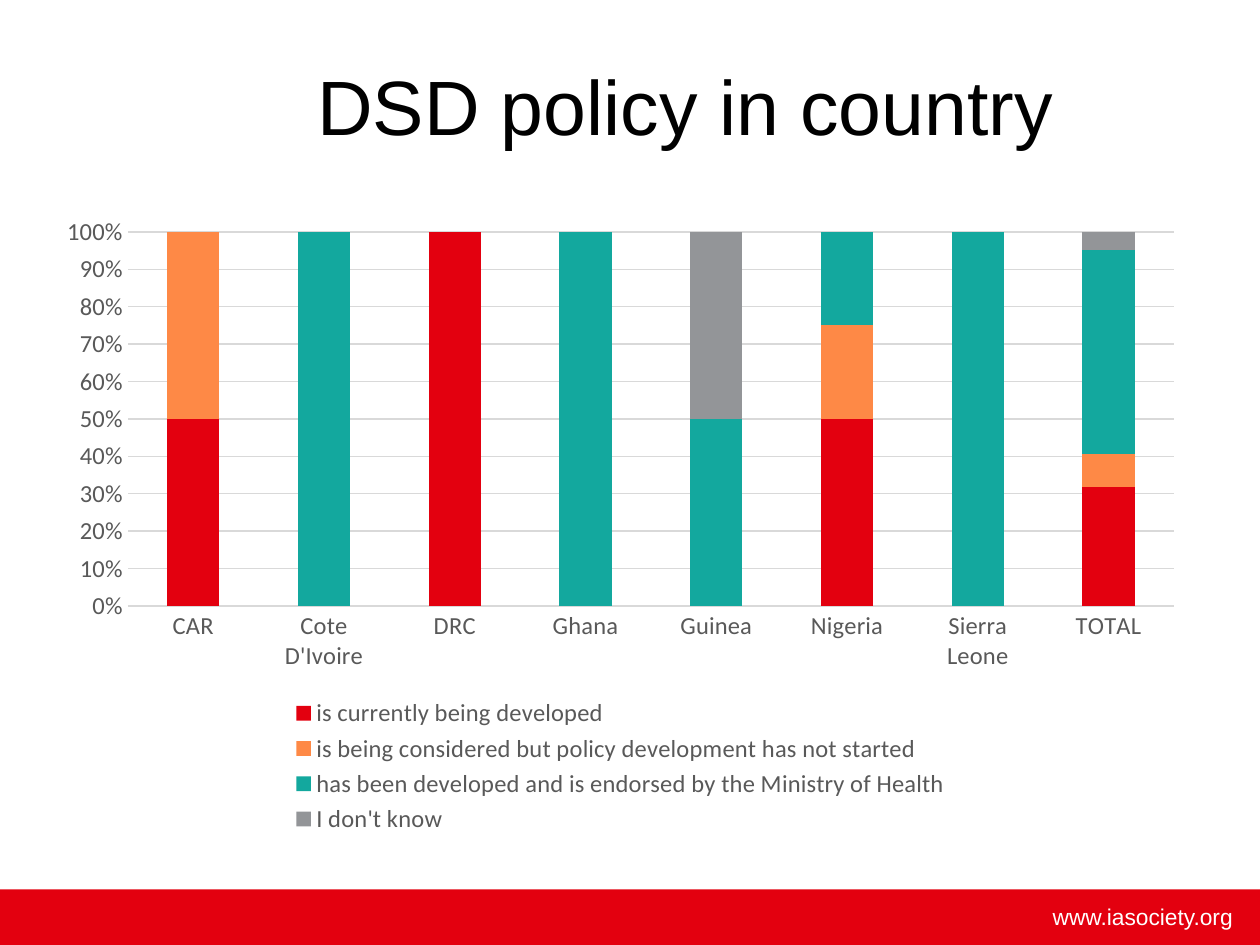
from pptx import Presentation
from pptx.chart.data import CategoryChartData
from pptx.dml.color import RGBColor
from pptx.enum.chart import XL_CHART_TYPE, XL_LEGEND_POSITION, XL_TICK_MARK
from pptx.enum.shapes import MSO_SHAPE
from pptx.enum.text import MSO_ANCHOR, PP_ALIGN
from pptx.util import Inches, Pt

RED, GRID, LABEL = "E3000F", "D9D9D9", "595959"
COUNTRIES = ["CAR", "Cote D'Ivoire", "DRC", "Ghana", "Guinea", "Nigeria",
             "Sierra Leone", "TOTAL"]
POLICY_STATUS = [
    ("is currently being developed", RED,
     [50, None, 100, None, None, 50, None, 32]),
    ("is being considered but policy development has not started", "FE8946",
     [50, None, None, None, None, 25, None, 9]),
    ("has been developed and is endorsed by the Ministry of Health", "13A89E",
     [None, 100, None, 100, 50, 25, 100, 55]),
    ("I don't know ", "939598",
     [None, None, None, None, 50, None, None, 5]),
]


def color(hex_value):
    return RGBColor.from_string(hex_value)


def box(left, top, width, height):
    return [Inches(side) for side in (left, top, width, height)]


def style_font(font, size, hex_value, name):
    for attribute, value in {"size": Pt(size), "name": name}.items():
        setattr(font, attribute, value)
    font.color.rgb = color(hex_value)


def write(frame, text, size, hex_value, align):
    for attribute, value in {"text": text, "word_wrap": True,
                             "vertical_anchor": MSO_ANCHOR.MIDDLE}.items():
        setattr(frame, attribute, value)
    paragraph = frame.paragraphs[0]
    paragraph.alignment = align
    style_font(paragraph.runs[0].font, size, hex_value, "Arial")


def add_title(slide, area):
    title = slide.shapes.title
    title.left, title.top, title.width, title.height = area
    write(title.text_frame, "DSD policy in country", 44, "000000",
          PP_ALIGN.CENTER)


def add_footer(slide, band_area, address_area):
    band = slide.shapes.add_shape(MSO_SHAPE.RECTANGLE, *band_area)
    band.shadow.inherit = False
    band.fill.solid()
    band.fill.fore_color.rgb = color(RED)
    band.line.fill.background()
    address = slide.shapes.add_textbox(*address_area)
    write(address.text_frame, "www.iasociety.org", 13, "FFFFFF",
          PP_ALIGN.RIGHT)


def style_axis(axis):
    for attribute, value in {"major_tick_mark": XL_TICK_MARK.NONE,
                             "minor_tick_mark": XL_TICK_MARK.NONE}.items():
        setattr(axis, attribute, value)
    style_font(axis.tick_labels.font, 14, LABEL, "Calibri")


def style_line(line):
    line.color.rgb = color(GRID)
    line.width = Pt(0.75)


def add_policy_chart(slide, area):
    policy_data = CategoryChartData()
    policy_data.categories = COUNTRIES
    for status, _, shares in POLICY_STATUS:
        policy_data.add_series(status, shares)
    chart = slide.shapes.add_chart(
        XL_CHART_TYPE.COLUMN_STACKED_100, *area, policy_data).chart
    style_font(chart.font, 10, "000000", "Calibri")
    chart.has_title = False

    plot = chart.plots[0]
    for attribute, value in {"gap_width": 150, "overlap": 100,
                             "vary_by_categories": False}.items():
        setattr(plot, attribute, value)
    for series, (_, fill, _) in zip(plot.series, POLICY_STATUS):
        series.format.fill.solid()
        series.format.fill.fore_color.rgb = color(fill)

    countries, shares = chart.category_axis, chart.value_axis
    style_axis(countries)
    style_axis(shares)
    style_line(countries.format.line)
    shares.format.line.fill.background()
    shares.has_major_gridlines = True
    style_line(shares.major_gridlines.format.line)
    shares.tick_labels.number_format = "0%"
    shares.tick_labels.number_format_is_linked = False

    chart.has_legend = True
    chart.legend.position = XL_LEGEND_POSITION.BOTTOM
    chart.legend.include_in_layout = False
    style_font(chart.legend.font, 14, LABEL, "Calibri")


def main():
    deck = Presentation()
    deck.slide_width, deck.slide_height = Inches(10), Inches(7.5)
    slide = deck.slides.add_slide(deck.slide_layouts.get_by_name("Title Only"))
    add_footer(slide, box(0, 7.06, 10, 0.44), box(6.57, 7.11, 3.31, 0.32))
    add_title(slide, box(1.38, 0.21, 8.12, 1.25))
    add_policy_chart(slide, box(0.35, 1.62, 9.15, 5.04))
    deck.save("out.pptx")


if __name__ == "__main__":
    main()
